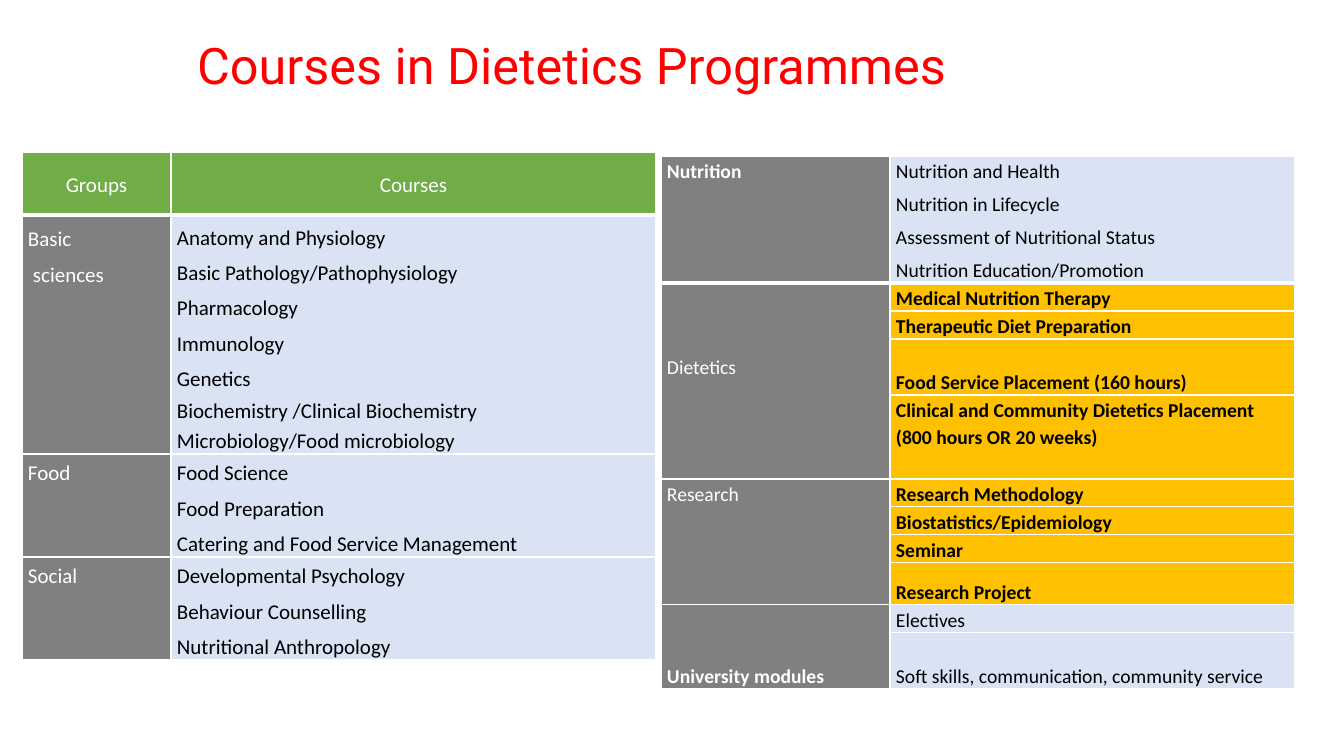
from pptx import Presentation
from pptx.dml.color import RGBColor
from pptx.enum.text import MSO_ANCHOR, PP_ALIGN
from pptx.oxml.xmlchemy import OxmlElement
from pptx.util import Pt

EMU_PER_PX = 914400 / 100.8
WHITE, BLACK, RED = "FFFFFF", "000000", "FF0000"
GREEN, GREY, PALE_BLUE, AMBER = "70AD47", "808080", "DAE3F3", "FFC000"
TOP, MIDDLE, BOTTOM = MSO_ANCHOR.TOP, MSO_ANCHOR.MIDDLE, MSO_ANCHOR.BOTTOM

BASIC_TO_SOCIAL = [
    (216, 239, ["Basic", "sciences"], 8, [
        "Anatomy and Physiology", "Basic Pathology/Pathophysiology",
        "Pharmacology", "Immunology", "Genetics",
        "Biochemistry /Clinical Biochemistry", "Microbiology/Food microbiology"]),
    (455, 103, ["Food"], 3, [
        "Food Science", "Food Preparation",
        "Catering and Food Service Management"]),
    (558, 103, ["Social"], 3, [
        "Developmental Psychology", "Behaviour Counselling",
        "Nutritional Anthropology"]),
]
TIGHT_COURSES = BASIC_TO_SOCIAL[0][4][-2:]

NUTRITION_TO_MODULES = [
    ("Nutrition", True, TOP, 0, PALE_BLUE, [
        (127, "Nutrition and Health\nNutrition in Lifecycle\n"
              "Assessment of Nutritional Status\nNutrition Education/Promotion")]),
    ("Dietetics", False, TOP, 69, AMBER, [
        (28, "Medical Nutrition Therapy"),
        (28, "Therapeutic Diet Preparation"),
        (56, "Food Service Placement (160 hours)"),
        (84, "Clinical and Community Dietetics Placement (800 hours OR 20 weeks)")]),
    ("Research", False, TOP, 0, AMBER, [
        (28, "Research Methodology"),
        (28, "Biostatistics/Epidemiology"),
        (28, "Seminar"),
        (42, "Research Project")]),
    ("University modules", True, BOTTOM, 0, PALE_BLUE, [
        (28, "Electives"),
        (56, "Soft skills, communication, community service")]),
]


def px(length):
    return round(length * EMU_PER_PX)


def colour(hex_code):
    return RGBColor.from_string(hex_code)


def draw_borders(cell, bottom_width):
    properties = cell._tc.get_or_add_tcPr()
    sides = [("a:lnL", 1), ("a:lnR", 1), ("a:lnT", 1), ("a:lnB", bottom_width)]
    for position, (side, width) in enumerate(sides):
        border = OxmlElement(side)
        border.set("w", str(Pt(width)))
        solid = OxmlElement("a:solidFill")
        white = OxmlElement("a:srgbClr")
        white.set("val", WHITE)
        solid.append(white)
        border.append(solid)
        properties.insert(position, border)


def fill_cell(cell, lines, size, fill, ink, bold=False, anchor=BOTTOM,
              align=PP_ALIGN.LEFT, top=0):
    cell.text_frame.text = "\n".join(lines)
    cell.vertical_anchor = anchor
    cell.margin_left = cell.margin_right = px(6)
    cell.margin_top, cell.margin_bottom = px(top), 0
    cell.fill.solid()
    cell.fill.fore_color.rgb = colour(fill)
    for position, paragraph in enumerate(cell.text_frame.paragraphs):
        gap = 0 if paragraph.text in TIGHT_COURSES else 2
        paragraph.alignment = align
        paragraph.line_spacing = 1.15
        paragraph.space_before = Pt(gap if position else 0)
        paragraph.space_after = Pt(gap)
        for run in paragraph.runs:
            run.font.name = "Calibri"
            run.font.size = Pt(size)
            run.font.bold = bold
            run.font.color.rgb = colour(ink)


def add_grid(slide, left, top, widths, heights):
    grid = slide.shapes.add_table(
        len(heights), len(widths), px(left), px(top),
        px(sum(widths)), px(sum(heights))).table
    grid.first_row = grid.horz_banding = False
    for column, width in zip(grid.columns, widths):
        column.width = px(width)
    for row, height in zip(grid.rows, heights):
        row.height = px(height)
    for index, row in enumerate(grid.rows):
        for cell in row.cells:
            draw_borders(cell, 1 if index else 3)
    return grid


def add_title(slide, left, top, width, height):
    title = slide.shapes.title
    title.left, title.top = px(left), px(top)
    title.width, title.height = px(width), px(height)
    frame = title.text_frame
    frame.text = "Courses in Dietetics Programmes"
    frame.vertical_anchor = MIDDLE
    paragraph = frame.paragraphs[0]
    paragraph.alignment = PP_ALIGN.LEFT
    paragraph.line_spacing = 0.9
    font = paragraph.runs[0].font
    font.name, font.size = "Roboto", Pt(36)
    font.color.rgb = colour(RED)


def add_basic_to_social(slide, left, top):
    heights = [63] + [height for _, height, *_ in BASIC_TO_SOCIAL]
    grid = add_grid(slide, left, top, [149, 485], heights)
    for column, heading in enumerate(["Groups", "Courses"]):
        fill_cell(grid.cell(0, column), [heading], 15, GREEN, WHITE,
                  anchor=MIDDLE, align=PP_ALIGN.CENTER)
    for row, (_, _, group, offset, courses) in enumerate(BASIC_TO_SOCIAL, 1):
        group_cell = grid.cell(row, 0)
        fill_cell(group_cell, group, 15, GREY, WHITE, anchor=TOP, top=offset)
        for paragraph in group_cell.text_frame.paragraphs[1:]:
            paragraph._p.get_or_add_pPr().set("marL", str(px(5)))
        fill_cell(grid.cell(row, 1), courses, 15, PALE_BLUE, BLACK)


def add_nutrition_to_modules(slide, left, top):
    heights = [height for *_, courses in NUTRITION_TO_MODULES
               for height, _ in courses]
    grid = add_grid(slide, left, top, [229, 405], heights)
    first = 0
    for group, bold, anchor, offset, fill, courses in NUTRITION_TO_MODULES:
        last = first + len(courses) - 1
        if last > first:
            grid.cell(first, 0).merge(grid.cell(last, 0))
        fill_cell(grid.cell(first, 0), [group], 14, GREY, WHITE, bold,
                  anchor, top=offset)
        for row, (height, course) in enumerate(courses, first):
            fill_cell(grid.cell(row, 1), course.split("\n"), 14, fill, BLACK,
                      bold=fill == AMBER, anchor=TOP if height == 84 else BOTTOM)
        first = last + 1


def main():
    deck = Presentation()
    deck.slide_width, deck.slide_height = px(1344), px(756)
    slide = deck.slides.add_slide(deck.slide_layouts[5])
    add_basic_to_social(slide, 22, 152)
    add_nutrition_to_modules(slide, 661, 156)
    add_title(slide, 187, 13, 834, 110)
    deck.save("out.pptx")


if __name__ == "__main__":
    main()
